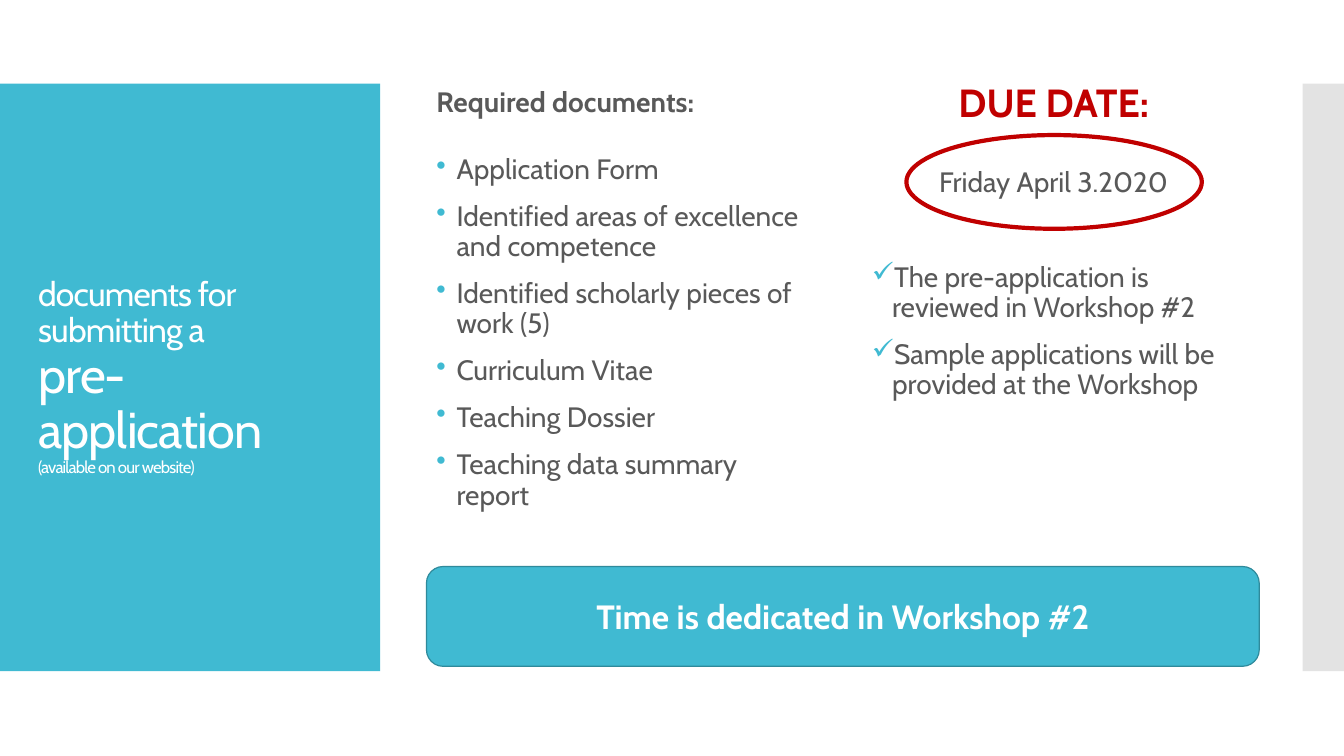
from dataclasses import dataclass
from typing import Optional

from lxml.etree import SubElement
from pptx import Presentation
from pptx.dml.color import RGBColor
from pptx.enum.shapes import MSO_SHAPE as Preset
from pptx.enum.text import MSO_ANCHOR as Anchor, PP_ALIGN as Align
from pptx.oxml.ns import qn
from pptx.util import Inches, Pt

FONT = "Cabin"
TEAL = RGBColor(0x40, 0xBA, 0xD2)
DARK_TEAL = RGBColor(0x2F, 0x8A, 0x9B)
LIGHT_GRAY = RGBColor(0xE3, 0xE3, 0xE3)
TEXT_GRAY = RGBColor(0x59, 0x59, 0x59)
RED = RGBColor(0xC0, 0x00, 0x00)
WHITE = RGBColor(0xFF, 0xFF, 0xFF)

LEFT_COLUMN, RIGHT_COLUMN, COLUMN_WIDTH = 4.23, 8.55, 3.8
PANEL_TOP, PANEL_HEIGHT = 0.83, 5.83


@dataclass
class Box:
    left: float
    top: float
    width: float
    height: float

    def lengths(self) -> list:
        return [Inches(v) for v in (self.left, self.top, self.width, self.height)]


@dataclass
class Line:
    text: str
    size: float = 20
    color: RGBColor = TEXT_GRAY
    bold: bool = False
    align: Align = Align.LEFT
    before: float = 0
    bullet: Optional[str] = None


@dataclass
class Figure:
    preset: Preset
    box: Box
    fill: Optional[RGBColor] = None
    line: Optional[RGBColor] = None
    line_width: float = 0


def style_run(run, size: float, color: RGBColor, bold: bool = False) -> None:
    run.font.name = FONT
    run.font.size = Pt(size)
    run.font.bold = bold
    run.font.color.rgb = color


def add_bullet(paragraph, symbol: str) -> None:
    properties = paragraph._p.get_or_add_pPr()
    properties.set("marL", str(Inches(0.2)))
    properties.set("indent", str(Inches(-0.2)))
    color = SubElement(properties, qn("a:buClr"))
    SubElement(color, qn("a:srgbClr")).set("val", str(TEAL))
    SubElement(properties, qn("a:buChar")).set("char", symbol)


def write_line(paragraph, line: Line) -> None:
    paragraph.text = line.text
    paragraph.alignment = line.align
    paragraph.line_spacing = 0.9
    paragraph.space_before = Pt(line.before)
    for run in paragraph.runs:
        style_run(run, line.size, line.color, line.bold)
    if line.bullet:
        add_bullet(paragraph, line.bullet)


def add_text(slide, box: Box, anchor: Anchor, lines: list[Line]):
    text_frame = slide.shapes.add_textbox(*box.lengths()).text_frame
    text_frame.word_wrap = True
    text_frame.vertical_anchor = anchor
    for index, line in enumerate(lines):
        write_line(text_frame.add_paragraph() if index else text_frame.paragraphs[0], line)
    return text_frame


def add_figure(slide, figure: Figure):
    shape = slide.shapes.add_shape(figure.preset, *figure.box.lengths())
    shape.shadow.inherit = False
    if figure.fill is None:
        shape.fill.background()
    else:
        shape.fill.solid()
        shape.fill.fore_color.rgb = figure.fill
    if figure.line is None:
        shape.line.fill.background()
    else:
        shape.line.color.rgb = figure.line
        shape.line.width = Pt(figure.line_width)
    return shape


def main() -> None:
    presentation = Presentation()
    presentation.slide_width = Inches(13.33)
    presentation.slide_height = Inches(7.5)
    slide = presentation.slides.add_slide(presentation.slide_layouts[6])

    # Side panels
    add_figure(slide, Figure(Preset.RECTANGLE, Box(0, PANEL_TOP, 3.77, PANEL_HEIGHT), TEAL))
    add_figure(slide, Figure(Preset.RECTANGLE, Box(12.92, PANEL_TOP, 0.41, PANEL_HEIGHT), LIGHT_GRAY))

    # Title in three sizes
    title = add_text(slide, Box(0.28, 1.23, 3.22, 5.03), Anchor.MIDDLE, [
        Line("documents for submitting a \vpre-application\v(available on our website)", color=WHITE)])
    for run, size in zip(title.paragraphs[0].runs, (24, 36, 12)):
        run.font.size = Pt(size)
        run.font._element.set("spc", "-60")

    # Required documents
    add_text(slide, Box(LEFT_COLUMN, 0.35, COLUMN_WIDTH, 0.88), Anchor.BOTTOM,
             [Line("Required documents:", bold=True)])
    documents = (
        "Application Form",
        "Identified areas of excellence and competence",
        "Identified scholarly pieces of work (5)",
        "Curriculum Vitae",
        "Teaching Dossier",
        "Teaching data summary report",
    )
    add_text(slide, Box(LEFT_COLUMN, 1.34, COLUMN_WIDTH, 3.93), Anchor.MIDDLE,
             [Line(document, before=12, bullet="•") for document in documents])

    # Due date and workshop notes
    add_text(slide, Box(RIGHT_COLUMN, 0.41, COLUMN_WIDTH, 0.89), Anchor.BOTTOM,
             [Line("DUE DATE:", 28, RED, True, Align.CENTER)])
    add_text(slide, Box(RIGHT_COLUMN, 1.23, COLUMN_WIDTH, 3.19), Anchor.MIDDLE, [
        Line("Friday April 3.2020", align=Align.CENTER, before=12),
        Line("The pre-application is reviewed in Workshop #2", before=46, bullet="✓"),
        Line("Sample applications will be provided at the Workshop", before=12, bullet="✓"),
    ])
    add_figure(slide, Figure(Preset.OVAL, Box(8.99, 1.34, 2.93, 0.93), line=RED, line_width=3))

    # Closing banner
    banner = add_figure(slide, Figure(
        Preset.ROUNDED_RECTANGLE, Box(LEFT_COLUMN, 5.62, 8.26, 0.99), TEAL, DARK_TEAL, 0.85))
    banner.text_frame.text = "Time is dedicated in Workshop #2"
    banner.text_frame.vertical_anchor = Anchor.MIDDLE
    paragraph = banner.text_frame.paragraphs[0]
    paragraph.alignment = Align.CENTER
    style_run(paragraph.runs[0], 24, WHITE, True)

    presentation.save("out.pptx")


if __name__ == "__main__":
    main()
